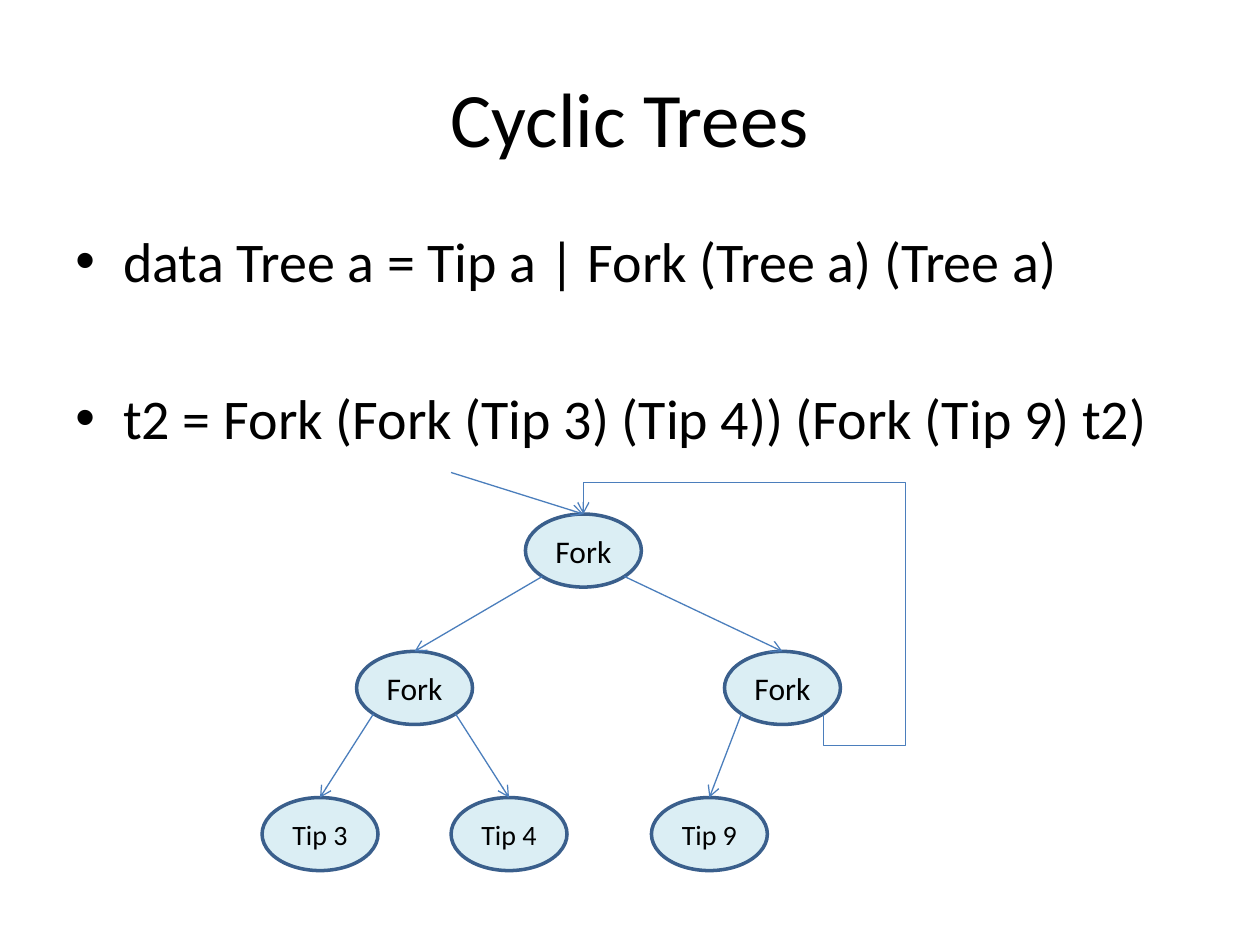
from lxml import etree
from pptx import Presentation
from pptx.dml.color import RGBColor
from pptx.enum.shapes import MSO_CONNECTOR, MSO_SHAPE
from pptx.enum.text import MSO_ANCHOR, PP_ALIGN
from pptx.oxml.ns import qn
from pptx.util import Inches, Pt

BLACK = RGBColor(0x00, 0x00, 0x00)
NODE_FILL = RGBColor(0xDB, 0xEE, 0xF4)
NODE_LINE = RGBColor(0x3A, 0x5F, 0x8C)
LINK = RGBColor(0x4B, 0x7E, 0xBC)
FONT = "Calibri"
NODE_W, NODE_H = 0.92, 0.58
DIAGONAL = 0.5 ** 0.5 / 2  # offset of an ellipse's 45-degree point, per unit of size

# name: (label, left, top, text size), relative to the tree's box
NODES = {
    "root": ("Fork", 2.09, 0.33, 18),
    "left": ("Fork", 0.75, 1.42, 18),
    "right": ("Fork", 3.67, 1.42, 18),
    "tip3": ("Tip 3", 0, 2.58, 16),
    "tip4": ("Tip 4", 1.5, 2.58, 16),
    "tip9": ("Tip 9", 3.09, 2.58, 16),
}
# parent, child, side of the parent that the link leaves (-1 left, 1 right)
LINKS = [
    ("root", "left", -1),
    ("root", "right", 1),
    ("left", "tip3", -1),
    ("left", "tip4", 1),
    ("right", "tip9", -1),
]


def style_runs(paragraph, size):
    for run in paragraph.runs:
        run.font.name = FONT
        run.font.size = Pt(size)
        run.font.color.rgb = BLACK


def add_title(slide, left, top, width, height):
    title = slide.shapes.add_textbox(
        Inches(left), Inches(top), Inches(width), Inches(height)).text_frame
    title.word_wrap = True
    title.vertical_anchor = MSO_ANCHOR.MIDDLE
    title.text = "Cyclic Trees"
    title.paragraphs[0].alignment = PP_ALIGN.CENTER
    style_runs(title.paragraphs[0], 44)


def add_definitions(slide, left, top, width, height):
    body = slide.shapes.add_textbox(
        Inches(left), Inches(top), Inches(width), Inches(height)).text_frame
    body.word_wrap = True
    body.text = ("data Tree a = Tip a | Fork (Tree a) (Tree a)\n"
                 "t2 = Fork (Fork (Tip 3) (Tip 4)) (Fork (Tip 9) t2)")
    for paragraph, gap in zip(body.paragraphs, (6, 51)):
        paragraph.space_before = Pt(gap)
        style_runs(paragraph, 32)
        properties = paragraph._p.get_or_add_pPr()
        properties.set("marL", str(Inches(0.38)))
        properties.set("indent", str(Inches(-0.38)))
        etree.SubElement(properties, qn("a:buFont"), typeface="Arial")
        etree.SubElement(properties, qn("a:buChar"), char="•")


def add_node(slide, label, left, top, size):
    node = slide.shapes.add_shape(
        MSO_SHAPE.OVAL, Inches(left), Inches(top), Inches(NODE_W), Inches(NODE_H))
    node.shadow.inherit = False
    node.fill.solid()
    node.fill.fore_color.rgb = NODE_FILL
    node.line.color.rgb = NODE_LINE
    node.line.width = Pt(2)
    frame = node.text_frame
    frame.margin_left = frame.margin_right = 0
    frame.vertical_anchor = MSO_ANCHOR.MIDDLE
    frame.text = label
    frame.paragraphs[0].alignment = PP_ALIGN.CENTER
    style_runs(frame.paragraphs[0], size)
    return node


def add_arrow(slide, kind, start_x, start_y, end_x, end_y):
    arrow = slide.shapes.add_connector(kind, start_x, start_y, end_x, end_y)
    arrow.line.color.rgb = LINK
    arrow.line.width = Pt(0.75)
    etree.SubElement(arrow.line._get_or_add_ln(), qn("a:tailEnd"), type="arrow")
    etree.SubElement(arrow._element.spPr, qn("a:effectLst"))
    return arrow


def lower_corner(node, side):
    """Point at 45 degrees on the lower left (-1) or lower right (1) of a node."""
    x = node.left + node.width * (0.5 + side * DIAGONAL)
    y = node.top + node.height * (0.5 + DIAGONAL)
    return int(x), int(y)


def add_cycle(slide, source, target):
    """Bent arrow from the source's lower right, round the right, to the target's top."""
    start_x, start_y = lower_corner(source, 1)
    end_x, end_y = target.left + target.width // 2, target.top
    across, down = start_x - end_x, start_y - end_y
    # The connector is turned by 90 degrees, so its box has the sides swapped.
    middle_x, middle_y = (start_x + end_x) // 2, (start_y + end_y) // 2
    cycle = add_arrow(slide, MSO_CONNECTOR.ELBOW,
                      middle_x + down // 2, middle_y - across // 2,
                      middle_x - down // 2, middle_y + across // 2)
    properties = cycle._element.spPr
    properties.find(qn("a:xfrm")).set("rot", str(90 * 60000))
    geometry = properties.find(qn("a:prstGeom"))
    geometry.set("prst", "bentConnector5")
    guides = geometry.find(qn("a:avLst"))
    if guides is None:
        guides = etree.SubElement(geometry, qn("a:avLst"))
    bends = (-Inches(0.25) / down, -Inches(0.65) / across, 1 + Inches(0.25) / down)
    for number, bend in enumerate(bends, 1):
        etree.SubElement(guides, qn("a:gd"), name=f"adj{number}",
                         fmla=f"val {round(bend * 100000)}")


def add_tree(slide, left, top):
    nodes = {name: add_node(slide, label, left + x, top + y, size)
             for name, (label, x, y, size) in NODES.items()}
    starts = [(*lower_corner(nodes[parent], side), nodes[child])
              for parent, child, side in LINKS]
    starts.append((Inches(left + 1.5), Inches(top), nodes["root"]))
    for x, y, child in starts:
        arrow = add_arrow(slide, MSO_CONNECTOR.STRAIGHT, x, y, child.left, child.top)
        arrow.end_connect(child, 0)
    add_cycle(slide, nodes["right"], nodes["root"])


def main():
    presentation = Presentation()
    presentation.slide_width = Inches(10)
    presentation.slide_height = Inches(7.5)
    slide = presentation.slides.add_slide(presentation.slide_layouts[6])
    add_title(slide, 0.5, 0.3, 9, 1.25)
    add_definitions(slide, 0.5, 1.75, 9, 4.95)
    add_tree(slide, 2.08, 3.75)
    presentation.save("out.pptx")


if __name__ == "__main__":
    main()
